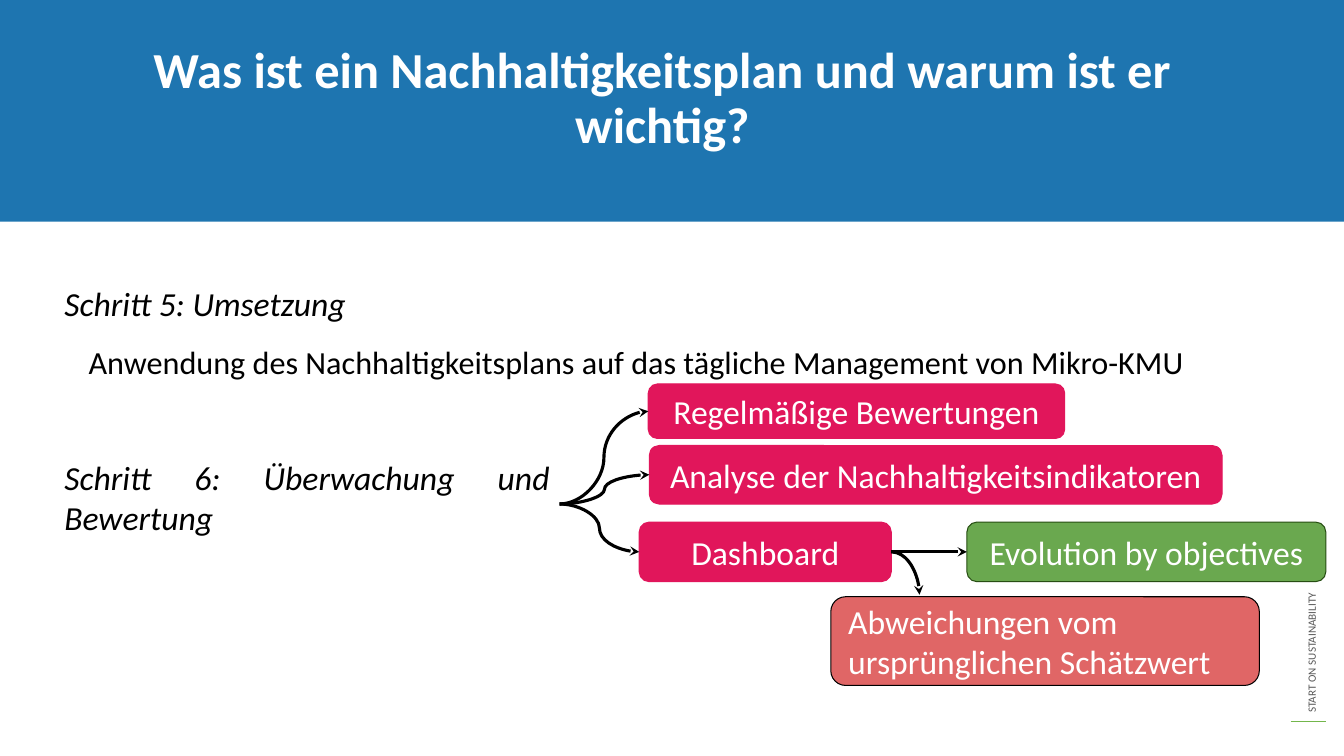
from lxml import etree
from pptx import Presentation
from pptx.dml.color import RGBColor
from pptx.enum.shapes import MSO_CONNECTOR as Connector, MSO_SHAPE as Shape
from pptx.enum.text import MSO_ANCHOR as Anchor, MSO_AUTO_SIZE as AutoSize, PP_ALIGN as Align
from pptx.oxml.ns import qn
from pptx.util import Inches, Pt

# Content
TITLE = "Was ist ein Nachhaltigkeitsplan und warum ist er wichtig?"
WHITE, BLACK, PINK, BLUE = "FFFFFF", "000000", "E1165B", "1E75B0"
STEP = {"size": Pt(24), "italic": True}
JUSTIFIED = {"alignment": Align.JUSTIFY, "space_before": Pt(8)}
SPACED = {**JUSTIFIED, "line_spacing": 1.5}

# text, (left, top, width, height), font values, paragraph values
TEXTS = [
    ("Schritt 5: Umsetzung", (0.54, 2.51, 3.88, 0.92), STEP, SPACED),
    ("Anwendung des Nachhaltigkeitsplans auf das tägliche Management von Mikro-KMU",
     (0.78, 3.1, 11.34, 0.89), {"size": Pt(23)}, SPACED),
    ("Schritt 6: Überwachung und Bewertung", (0.54, 4.43, 5.01, 1.12), STEP, JUSTIFIED),
]
# text, (left, top, width, height), fill, line, alignment
BOXES = [
    ("Regelmäßige Bewertungen", (6.43, 3.81, 4.13, 0.54), PINK, PINK, Align.CENTER),
    ("Analyse der Nachhaltigkeitsindikatoren", (6.44, 4.42, 5.68, 0.58), PINK, PINK, Align.CENTER),
    ("Dashboard", (6.34, 5.18, 2.5, 0.59), PINK, PINK, Align.CENTER),
    ("Evolution by objectives", (9.59, 5.18, 3.56, 0.59), "6AA84F", "274E13", Align.CENTER),
    ("Abweichungen vom ursprünglichen Schätzwert", (8.24, 5.92, 4.25, 0.88), "E06666", BLACK,
     Align.LEFT),
]
FORK = (5.55, 5)
BRANCHES = ["Regelmäßige Bewertungen", "Analyse der Nachhaltigkeitsindikatoren", "Dashboard"]

presentation = Presentation()
presentation.slide_width, presentation.slide_height = Inches(13.33), Inches(7.5)
slide = presentation.slides.add_slide(presentation.slide_layouts[5])
shapes = slide.shapes


def color(value):
    return RGBColor.from_string(value)


def apply(target, values):
    for name, value in values.items():
        setattr(target, name, value)


def write(shape, text, ink, font, paragraph_values, inset=(0.1, 0.1), **frame_values):
    frame = shape.text_frame
    across, down = (Inches(value) for value in inset)
    apply(frame, {"word_wrap": True, "margin_left": across, "margin_right": across,
                  "margin_top": down, "margin_bottom": down, **frame_values})
    paragraph = frame.paragraphs[0]
    apply(paragraph, paragraph_values)
    run = paragraph.add_run()
    run.text = text
    apply(run.font, {"name": "Calibri", **font})
    run.font.color.rgb = color(ink)


def add_box(kind, place, fill, line=None):
    shape = shapes.add_shape(kind, *map(Inches, place))
    shape.shadow.inherit = False
    shape.fill.solid()
    shape.fill.fore_color.rgb = color(fill)
    if line:
        shape.line.color.rgb = color(line)
        shape.line.width = Pt(0.75)
    else:
        shape.line.fill.background()
    return shape


def add_line(kind, start, end, ink=BLACK, width=2.25, arrow=True):
    connector = shapes.add_connector(kind, *map(Inches, (*start, *end)))
    connector.line.color.rgb = color(ink)
    connector.line.width = Pt(width)
    if arrow:
        etree.SubElement(connector.line._get_or_add_ln(), qn("a:tailEnd"), type="stealth")
    etree.SubElement(connector.element.spPr, qn("a:effectLst"))
    return connector


# Title on its blue band
band = add_box(Shape.RECTANGLE, (0, 0, 13.33, 2.2), BLUE)
title = shapes.title
title.element.addprevious(band.element)
apply(title, dict(zip(("left", "top", "width", "height"), map(Inches, (0.84, 0.4, 11.46, 0.88)))))
write(title, TITLE, WHITE, {"size": Pt(36), "bold": True},
      {"alignment": Align.CENTER, "line_spacing": 0.9, "space_before": Pt(8)},
      inset=(0.1, 0.05), vertical_anchor=Anchor.TOP, auto_size=AutoSize.NONE)

# Side label and its green rule
label = shapes.add_textbox(*map(Inches, (10.78, 4.82, 4.46, 0.24)))
label.rotation = 270
write(label, "START ON SUSTAINABILITY", "595959", {"size": Pt(8)}, {}, inset=(0.1, 0.05),
      auto_size=AutoSize.SHAPE_TO_FIT_TEXT)
add_line(Connector.STRAIGHT, (12.8, 7.16), (13.15, 7.16), "73B64B", 1, arrow=False)

# Steps
for text, place, font, paragraph_values in TEXTS:
    textbox = shapes.add_textbox(*map(Inches, place))
    write(textbox, text, BLACK, font, paragraph_values, auto_size=AutoSize.SHAPE_TO_FIT_TEXT)

# Rounded boxes
boxes, places = {}, {}
for text, place, fill, line, alignment in BOXES:
    boxes[text], places[text] = add_box(Shape.ROUNDED_RECTANGLE, place, fill, line), place
    write(boxes[text], text, WHITE, {"size": Pt(24)}, {"alignment": alignment},
          inset=(0.13, 0.13), vertical_anchor=Anchor.MIDDLE)

# Curves from step 6 to the left side of each branch
for name in BRANCHES:
    left, top, width, height = places[name]
    add_line(Connector.CURVE, FORK, (left, top + height / 2))

# Arrows leaving the dashboard
left, top, width, height = places["Dashboard"]
exit_point = (left + width, top + height / 2)
target = places["Evolution by objectives"]
straight = add_line(Connector.STRAIGHT, exit_point, (target[0], exit_point[1]))
straight.begin_connect(boxes["Dashboard"], 3)
straight.end_connect(boxes["Evolution by objectives"], 1)
bend = add_line(Connector.CURVE, exit_point, (9.12, 5.9))
bend.element.spPr.find(qn("a:prstGeom")).set("prst", "curvedConnector2")

presentation.save("out.pptx")
